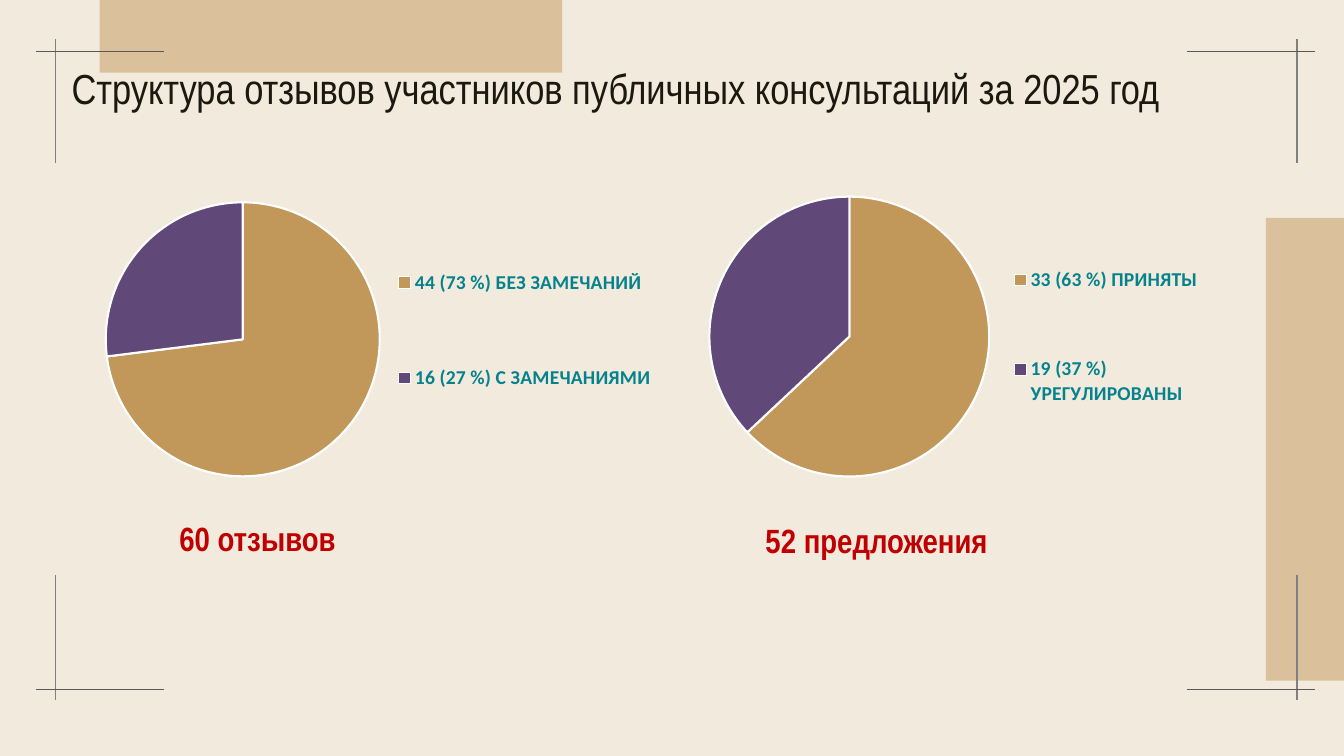
"""Slide with two pie charts on the feedback from public consultations."""
from lxml import etree
from pptx import Presentation
from pptx.chart.data import CategoryChartData
from pptx.dml.color import RGBColor
from pptx.enum.chart import XL_CHART_TYPE, XL_LEGEND_POSITION
from pptx.enum.shapes import MSO_CONNECTOR, MSO_SHAPE
from pptx.enum.text import MSO_ANCHOR, MSO_AUTO_SIZE, PP_ALIGN
from pptx.oxml.ns import qn
from pptx.util import Cm, Pt

PIE = XL_CHART_TYPE.PIE
LEGEND_RIGHT = XL_LEGEND_POSITION.RIGHT
STRAIGHT = MSO_CONNECTOR.STRAIGHT
RECTANGLE = MSO_SHAPE.RECTANGLE
MIDDLE = MSO_ANCHOR.MIDDLE
NO_AUTOFIT = MSO_AUTO_SIZE.NONE
LEFT, CENTER = PP_ALIGN.LEFT, PP_ALIGN.CENTER

COLORS = {
    "background": "F3EADE",
    "band": "DAC19B",
    "vertical": "808080",
    "horizontal": "595959",
    "title": "1B1810",
    "gold": "C19859",
    "violet": "604878",
    "white": "FFFFFF",
    "black": "000000",
    "legend": "05828C",
    "total": "C00000",
}


def color(name):
    return RGBColor.from_string(COLORS[name])


def set_layout(parent, index, fractions, inner=False):
    for old_layout in parent.findall(qn("c:layout")):
        parent.remove(old_layout)
    layout = etree.Element(qn("c:layout"))
    manual = etree.SubElement(layout, qn("c:manualLayout"))
    settings = [("layoutTarget", "inner")] if inner else []
    settings += [("xMode", "edge"), ("yMode", "edge")]
    settings += zip("xywh", fractions)
    for tag, value in settings:
        etree.SubElement(manual, qn("c:" + tag)).set("val", str(value))
    parent.insert(index, layout)


presentation = Presentation()
presentation.slide_width = Cm(33.87)
presentation.slide_height = Cm(19.05)
slide = presentation.slides.add_slide(presentation.slide_layouts[5])
slide.background.fill.solid()
slide.background.fill.fore_color.rgb = color("background")

title = slide.shapes.title
title.left, title.top, title.width, title.height = Cm(1.55), Cm(0.46), Cm(29.21), Cm(3.68)
title.text_frame.text = "Структура отзывов участников публичных консультаций за 2025 год"
title.text_frame.auto_size = NO_AUTOFIT
title.text_frame.word_wrap = True
title.text_frame.vertical_anchor = MIDDLE
paragraph = title.text_frame.paragraphs[0]
paragraph.alignment = LEFT
paragraph.line_spacing = 0.9
font = paragraph.runs[0].font
font.name, font.size, font.color.rgb = "Arial Narrow", Pt(30), color("title")

bands = [(2.51, 0, 11.66, 1.83), (31.9, 5.49, 1.97, 11.66)]
for band_box in bands:
    band = slide.shapes.add_shape(RECTANGLE, *[Cm(length) for length in band_box])
    band.shadow.inherit = False
    band.fill.solid()
    band.fill.fore_color.rgb = color("band")
    band.line.fill.background()

corner_marks = []
for x in (1.4, 32.69):
    for top, bottom in ((0.99, 4.11), (14.5, 17.63)):
        corner_marks.append((x, top, x, bottom, "vertical"))
for y in (1.3, 17.37):
    for left, right in ((0.91, 4.14), (29.92, 33.15)):
        corner_marks.append((left, y, right, y, "horizontal"))
for *ends, color_name in corner_marks:
    mark = slide.shapes.add_connector(STRAIGHT, *[Cm(length) for length in ends])
    mark.line.color.rgb = color(color_name)
    mark.line.width = Pt(1)
    etree.SubElement(mark._element.spPr, qn("a:effectLst"))

pies = [
    {
        "box": (1.22, 4.72, 15.8, 7.59),
        "categories": ["44 (73 %) БЕЗ ЗАМЕЧАНИЙ", "16 (27 %) С ЗАМЕЧАНИЯМИ"],
        "values": (73, 27),
        "plot": (0.08, 0.05, 0.46, 0.91),
        "legend": (0.53, 0.04, 0.46, 0.87),
        "total": "60 отзывов",
        "total_at": (2.26, 12.93),
    },
    {
        "box": (17.02, 4.57, 13.92, 7.75),
        "categories": ["33 (63 %) ПРИНЯТЫ", "19 (37 %) УРЕГУЛИРОВАНЫ"],
        "values": (63, 37),
        "plot": (0.06, 0.05, 0.51, 0.91),
        "legend": (0.59, 0.07, 0.38, 0.87),
        "total": "52 предложения",
        "total_at": (17.86, 12.98),
    },
]
for pie in pies:
    data = CategoryChartData()
    data.categories = pie["categories"]
    data.add_series("Series 1", pie["values"])
    box = [Cm(length) for length in pie["box"]]
    chart = slide.shapes.add_chart(PIE, *box, data).chart
    chart.has_title = False
    chart.font.name, chart.font.size = "Calibri", Pt(10)
    chart.font.color.rgb = color("black")
    plot = chart.plots[0]
    plot.vary_by_categories = True
    for index, color_name in enumerate(("gold", "violet")):
        point_format = plot.series[0].points[index].format
        point_format.fill.solid()
        point_format.fill.fore_color.rgb = color(color_name)
        point_format.line.color.rgb = color("white")
        point_format.line.width = Pt(1.5)

    chart.has_legend = True
    legend = chart.legend
    legend.position = LEGEND_RIGHT
    legend.include_in_layout = False
    legend.font.name, legend.font.size, legend.font.bold = "Calibri", Pt(14), True
    legend.font.color.rgb = color("legend")
    set_layout(chart._chartSpace.chart.plotArea, 0, pie["plot"], inner=True)
    set_layout(legend._element, 1, pie["legend"])

    left, top = pie["total_at"]
    total = slide.shapes.add_textbox(Cm(left), Cm(top), Cm(8.46), Cm(1.14))
    frame = total.text_frame
    frame.word_wrap = True
    frame.margin_left = frame.margin_right = frame.margin_bottom = 0
    frame.margin_top = Cm(0.13)
    frame.text = pie["total"]
    paragraph = frame.paragraphs[0]
    paragraph.alignment = CENTER
    font = paragraph.runs[0].font
    font.name, font.size, font.bold = "Arial Narrow", Pt(24), True
    font.color.rgb = color("total")

presentation.save("out.pptx")
